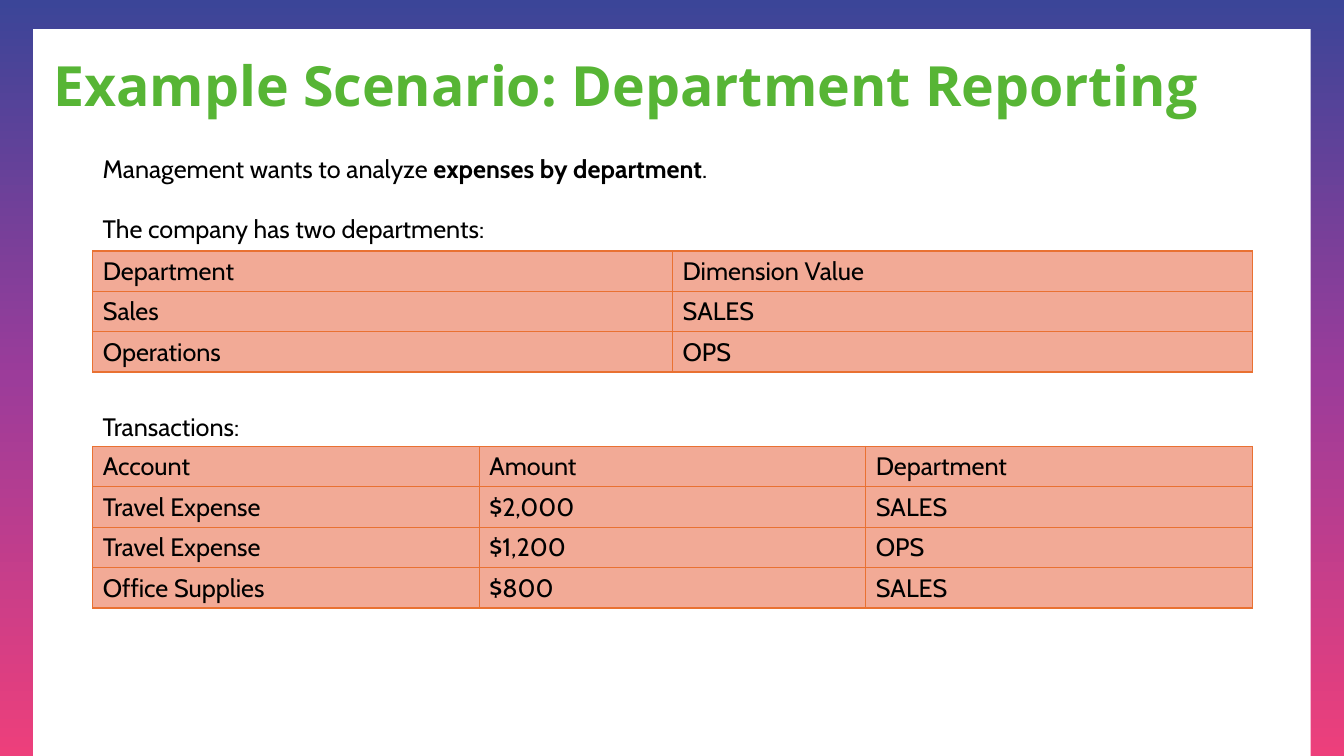
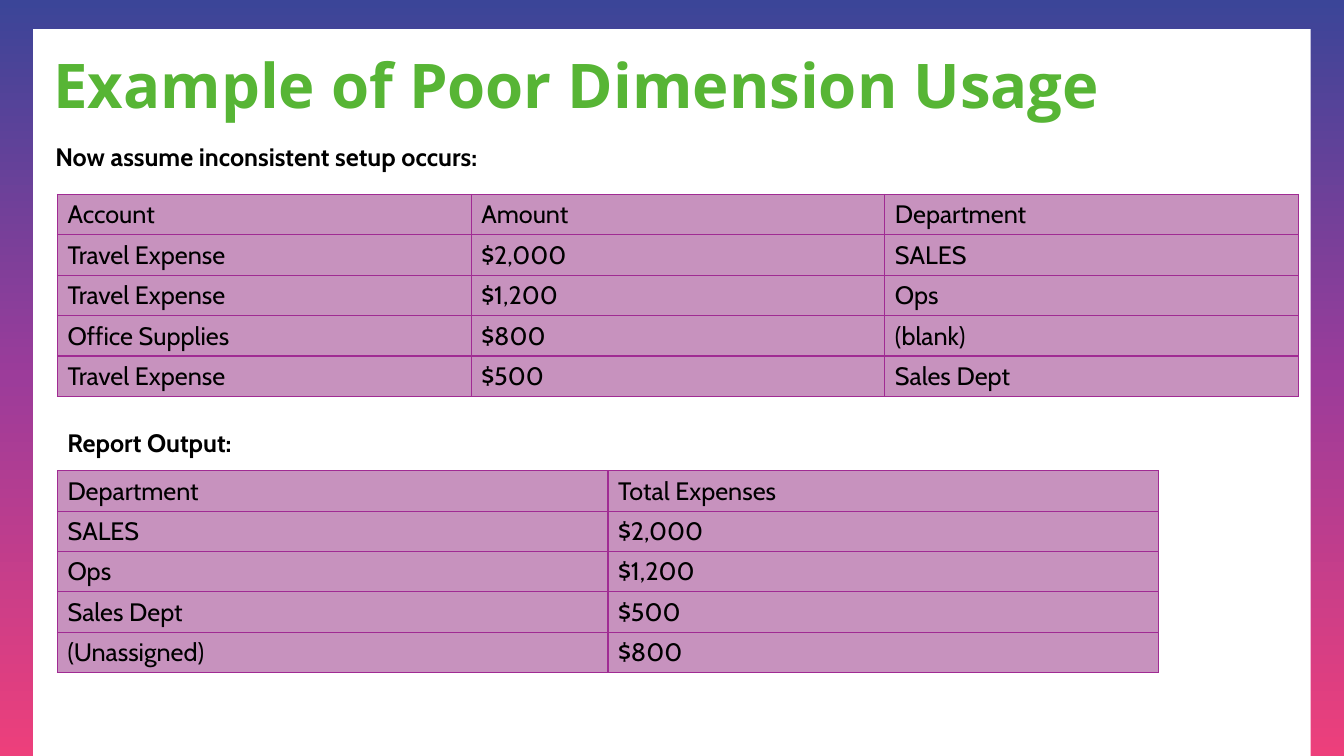
from dataclasses import dataclass

import lxml.etree
import pptx
import pptx.dml.color
import pptx.enum.dml
import pptx.enum.shapes
import pptx.enum.text
import pptx.oxml.ns
import pptx.presentation
import pptx.shapes.autoshape
import pptx.slide
import pptx.table
import pptx.text.text
import pptx.util

Inches = pptx.util.Inches
qn = pptx.oxml.ns.qn


@dataclass(frozen=True)
class Theme:
    title_font: str = "Open Sans"
    body_font: str = "Cabin"
    title: str = "57B535"
    text: str = "000000"
    panel: str = "FFFFFF"
    frame: tuple[str, ...] = ("3B4598", "9C3C9A", "ED3F7B")
    body_size: float = 18
    border_width: float = 1


@dataclass(frozen=True)
class TablePalette:
    fill: str
    border: str


@dataclass(frozen=True)
class Span:
    text: str
    bold: bool = False


@dataclass(frozen=True)
class Label:
    left: float
    top: float
    spans: tuple[Span, ...]


@dataclass(frozen=True)
class Grid:
    left: float
    top: float
    width: float
    rows: tuple[tuple[str, ...], ...]


@dataclass(frozen=True)
class Page:
    title: str
    title_size: float
    palette: TablePalette
    labels: tuple[Label, ...]
    grids: tuple[Grid, ...]


THEME = Theme()
ORANGE = TablePalette("F2AA96", "E97132")
PURPLE = TablePalette("C792BE", "A02B93")
SLIDE_WIDTH, SLIDE_HEIGHT = 13.33, 7.5
LABEL_WIDTH, ROW_HEIGHT = 6.67, 0.4

PAGES = (
    Page(
        "Example Scenario: Department Reporting", 39.6, ORANGE,
        (
            Label(0.92, 1.47, (
                Span("Management wants to analyze "),
                Span("expenses by department", True),
                Span("."),
            )),
            Label(0.92, 2.07, (Span("The company has two departments:"),)),
            Label(0.92, 4.03, (Span("Transactions:"),)),
        ),
        (
            Grid(0.92, 2.49, 11.5, (
                ("Department", "Dimension Value"),
                ("Sales", "SALES"),
                ("Operations", "OPS"),
            )),
            Grid(0.92, 4.43, 11.5, (
                ("Account", "Amount", "Department"),
                ("Travel Expense", "$2,000", "SALES"),
                ("Travel Expense", "$1,200", "OPS"),
                ("Office Supplies", "$800", "SALES"),
            )),
        ),
    ),
    Page(
        "Example of Poor Dimension Usage", 44, PURPLE,
        (
            Label(0.45, 1.35, (Span("Now assume inconsistent setup occurs:", True),)),
            Label(0.57, 4.19, (Span("Report Output:", True),)),
        ),
        (
            Grid(0.57, 1.93, 12.31, (
                ("Account", "Amount", "Department"),
                ("Travel Expense", "$2,000", "SALES"),
                ("Travel Expense", "$1,200", "Ops"),
                ("Office Supplies", "$800", "(blank)"),
                ("Travel Expense", "$500", "Sales Dept"),
            )),
            Grid(0.57, 4.67, 10.92, (
                ("Department", "Total Expenses"),
                ("SALES", "$2,000"),
                ("Ops", "$1,200"),
                ("Sales Dept", "$500"),
                ("(Unassigned)", "$800"),
            )),
        ),
    ),
)


def rgb(color: str) -> pptx.dml.color.RGBColor:
    return pptx.dml.color.RGBColor.from_string(color)


def style_run(r: pptx.text.text._Run, font: str, size: float, color: str, bold: bool) -> None:
    r.font.name = font
    r.font.size = pptx.util.Pt(size)
    r.font.bold = bold
    r.font.color.rgb = rgb(color)


def add_rect(s: pptx.slide.Slide, left: float, top: float, width: float,
             height: float) -> pptx.shapes.autoshape.Shape:
    sp = s.shapes.add_shape(pptx.enum.shapes.MSO_SHAPE.RECTANGLE,
                            Inches(left), Inches(top), Inches(width), Inches(height))
    sp.shadow.inherit = False
    sp.line.fill.background()
    return sp


def add_frame(s: pptx.slide.Slide) -> None:
    frame = add_rect(s, 0, 0, SLIDE_WIDTH, SLIDE_HEIGHT)
    frame.fill.gradient()
    frame.fill.gradient_angle = 270
    stops = next(frame._element.iter(qn("a:gsLst")))
    stops.clear()
    for i, color in enumerate(THEME.frame):
        position = 100000 * i // (len(THEME.frame) - 1)
        stop = lxml.etree.SubElement(stops, qn("a:gs"), pos=str(position))
        lxml.etree.SubElement(stop, qn("a:srgbClr"), val=color)
    panel = add_rect(s, 0.33, 0.29, 12.67, 7.21)
    panel.fill.solid()
    panel.fill.fore_color.rgb = rgb(THEME.panel)


def add_text_frame(s: pptx.slide.Slide, left: float, top: float, width: float,
                   height: float) -> pptx.text.text.TextFrame:
    tf = s.shapes.add_textbox(Inches(left), Inches(top), Inches(width), Inches(height)).text_frame
    tf.word_wrap = True
    return tf


def add_title(s: pptx.slide.Slide, title: str, size: float) -> None:
    tf = add_text_frame(s, 0.43, 0.4, 12.45, 0.96)
    tf.vertical_anchor = pptx.enum.text.MSO_ANCHOR.MIDDLE
    tf.text = title
    p = tf.paragraphs[0]
    p.line_spacing = 0.9
    style_run(p.runs[0], THEME.title_font, size, THEME.title, True)


def add_label(s: pptx.slide.Slide, label: Label) -> None:
    tf = add_text_frame(s, label.left, label.top, LABEL_WIDTH, 0.4)
    tf.auto_size = pptx.enum.text.MSO_AUTO_SIZE.SHAPE_TO_FIT_TEXT
    for span in label.spans:
        r = tf.paragraphs[0].add_run()
        r.text = span.text
        style_run(r, THEME.body_font, THEME.body_size, THEME.text, span.bold)


def set_borders(cell: pptx.table._Cell, color: str) -> None:
    tc_pr = cell._tc.get_or_add_tcPr()
    width = str(int(pptx.util.Pt(THEME.border_width)))
    for i, side in enumerate(("a:lnL", "a:lnR", "a:lnT", "a:lnB")):
        ln = lxml.etree.Element(qn(side), w=width)
        fill = lxml.etree.SubElement(ln, qn("a:solidFill"))
        lxml.etree.SubElement(fill, qn("a:srgbClr"), val=color)
        tc_pr.insert(i, ln)


def add_grid(s: pptx.slide.Slide, grid: Grid, palette: TablePalette) -> None:
    table = s.shapes.add_table(len(grid.rows), len(grid.rows[0]),
                               Inches(grid.left), Inches(grid.top), Inches(grid.width),
                               Inches(ROW_HEIGHT * len(grid.rows))).table
    table.first_row = False
    table.horz_banding = False
    for i, row in enumerate(grid.rows):
        for j, text in enumerate(row):
            cell = table.cell(i, j)
            cell.text = text
            cell.vertical_anchor = pptx.enum.text.MSO_ANCHOR.MIDDLE
            cell.fill.solid()
            cell.fill.fore_color.rgb = rgb(palette.fill)
            set_borders(cell, palette.border)
            style_run(cell.text_frame.paragraphs[0].runs[0],
                      THEME.body_font, THEME.body_size, THEME.text, False)


def add_page(prs: pptx.presentation.Presentation, page: Page) -> None:
    s = prs.slides.add_slide(prs.slide_layouts[6])
    add_frame(s)
    add_title(s, page.title, page.title_size)
    for label in page.labels:
        add_label(s, label)
    for grid in page.grids:
        add_grid(s, grid, page.palette)


def main() -> None:
    prs = pptx.Presentation()
    prs.slide_width = Inches(SLIDE_WIDTH)
    prs.slide_height = Inches(SLIDE_HEIGHT)
    for page in PAGES:
        add_page(prs, page)
    prs.save("out.pptx")


if __name__ == "__main__":
    main()
